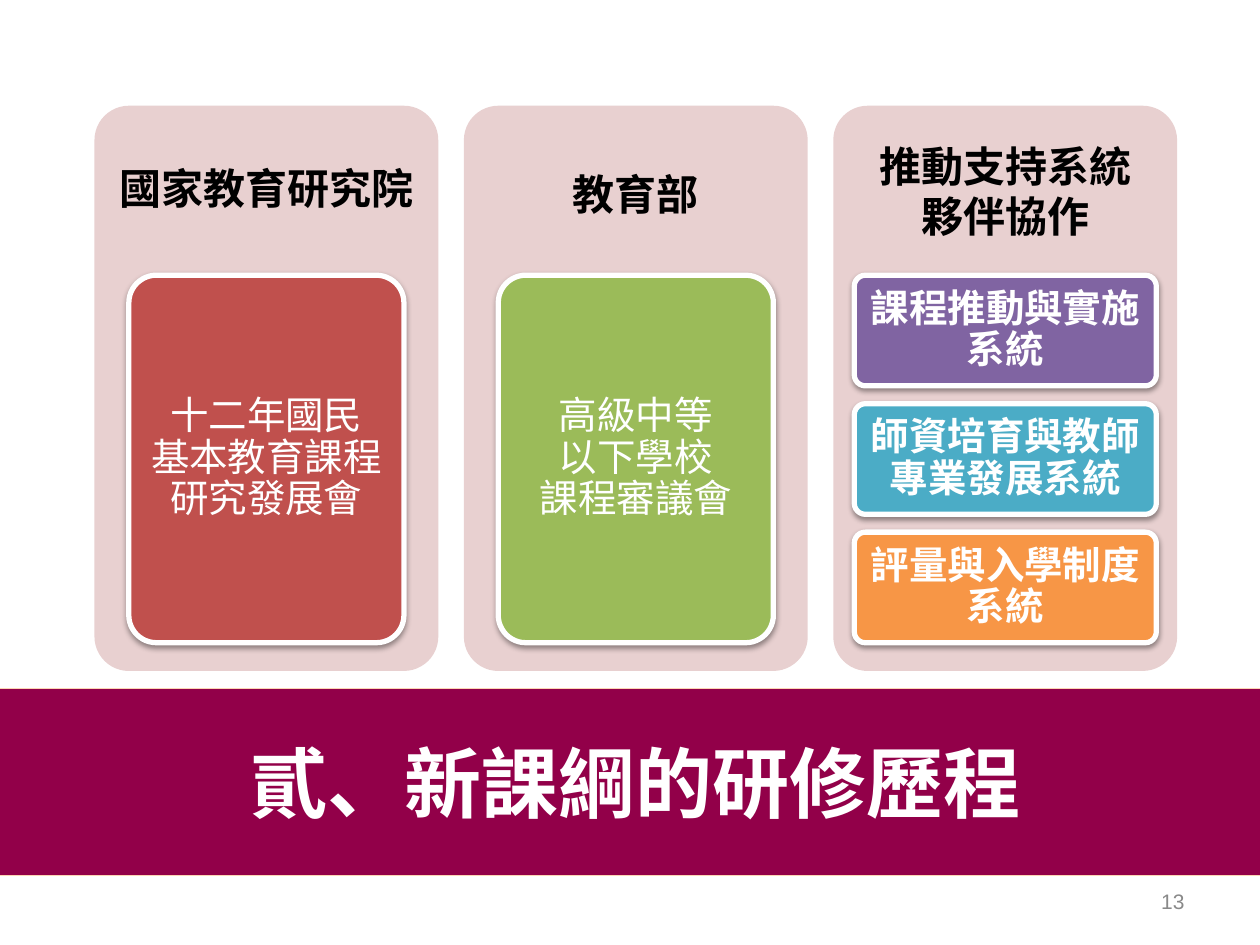
"""Builds the slide on how the new curriculum guidelines were developed."""
from dataclasses import dataclass

from lxml import etree
from pptx import Presentation
from pptx import util as u
from pptx.dml.color import RGBColor
from pptx.enum import shapes, text
from pptx.oxml import parse_xml
from pptx.oxml.ns import nsdecls, qn

SHADOW = (
    f'<a:effectLst {nsdecls("a")}><a:outerShdw blurRad="39370" dist="20320" dir="5400000" rotWithShape="0">'
    '<a:srgbClr val="000000"><a:alpha val="38000"/></a:srgbClr></a:outerShdw></a:effectLst>'
)


@dataclass(frozen=True)
class Theme:
    """Colours, fonts and type sizes."""
    banner: str = "920049"
    banner_edge: str = "FCD5B5"
    panel: str = "E8D0D0"
    red: str = "C0504D"
    green: str = "9BBB59"
    purple: str = "8064A2"
    teal: str = "4BACC6"
    orange: str = "F79646"
    white: str = "FFFFFF"
    black: str = "000000"
    grey: str = "898989"
    cjk: str = "Noto Sans CJK SC"
    latin: str = "Arial"
    title: int = 44
    heading: int = 24
    card: int = 22
    number: int = 12


class Deck:
    """Holds the theme and the current slide."""

    def __init__(self, theme):
        self.theme = theme
        self.presentation = Presentation()
        self.presentation.slide_width, self.presentation.slide_height = u.Pt(720), u.Pt(540)
        self.slide = self.presentation.slides.add_slide(self.presentation.slide_layouts[5])

    def set_text(self, shape, words, size, color, bold=False, font=None, align=text.PP_ALIGN.CENTER,
                 margins=(7.2, 3.6), spacing=None, after=0):
        frame = shape.text_frame
        frame.text = words
        frame.word_wrap = True
        frame.auto_size = text.MSO_AUTO_SIZE.NONE
        frame.vertical_anchor = text.MSO_ANCHOR.MIDDLE
        frame.margin_left = frame.margin_right = u.Pt(margins[0])
        frame.margin_top = frame.margin_bottom = u.Pt(margins[1])
        paragraph = frame.paragraphs[0]
        paragraph.alignment = align
        if spacing:
            paragraph.line_spacing = spacing
        if after:
            paragraph.space_after = u.Pt(after)
        for run in paragraph.runs:
            run.font.name = font or self.theme.cjk
            run.font.size = u.Pt(size)
            run.font.bold = bold
            run.font.color.rgb = RGBColor.from_string(color)
            east_asian = etree.Element(qn("a:ea"), typeface=run.font.name)
            run.font._element.find(qn("a:latin")).addnext(east_asian)

    def paint(self, shape, fill, edge=None, width=0):
        shape.fill.solid()
        shape.fill.fore_color.rgb = RGBColor.from_string(fill)
        if edge:
            shape.line.color.rgb = RGBColor.from_string(edge)
            shape.line.width = u.Pt(width)
        else:
            shape.line.fill.background()

    def rounded(self, box, fill, edge=None, width=0):
        shape = self.slide.shapes.add_shape(shapes.MSO_SHAPE.ROUNDED_RECTANGLE, *map(u.Pt, box))
        shape.adjustments[0] = 0.1
        shape.shadow.inherit = False
        self.paint(shape, fill, edge, width)
        return shape

    def label(self, box, words, size, color, **style):
        self.set_text(self.slide.shapes.add_textbox(*map(u.Pt, box)), words, size, color, **style)

    def banner(self, box, words):
        title = self.slide.shapes.title
        title.left, title.top, title.width, title.height = map(u.Pt, box)
        self.paint(title, self.theme.banner, self.theme.banner_edge, 0.75)
        self.set_text(title, words, self.theme.title, self.theme.white, bold=True)
        title.text_frame.margin_left = u.Pt(14.4)

    def panel(self, box, heading, spacing, after):
        self.rounded(box, self.theme.panel)
        left, top, width, height = box
        self.label((left, top, width, height * 0.3), heading, self.theme.heading, self.theme.black,
                   bold=True, margins=(7.2, 7.2), spacing=spacing, after=after)

    def card(self, box, words, fill, bold):
        card = self.rounded(box, fill, self.theme.white, 3)
        properties = card._element.spPr
        properties.replace(properties.find(qn("a:effectLst")), parse_xml(SHADOW))
        self.set_text(card, words, self.theme.card, self.theme.white, bold=bold,
                      margins=(4.4, 3.3), spacing=0.9, after=self.theme.card * 0.35)


def main():
    theme = Theme()
    deck = Deck(theme)
    deck.banner((-11.5, 393.3, 742.3, 107), "貳、新課綱的研修歷程")

    columns = [
        ("國家教育研究院", 0.9, theme.heading * 0.35, 157.2,
         [("十二年國民\v基本教育課程\v研究發展會", theme.red)]),
        ("教育部", u.Pt(32), 0, 157.2,
         [("高級中等\v以下學校\v課程審議會", theme.green)]),
        ("推動支持系統\v夥伴協作", u.Pt(28.8), 0, 172.6,
         [("課程推動與實施系統", theme.purple),
          ("師資培育與教師專業發展系統", theme.teal),
          ("評量與入學制度系統", theme.orange)]),
    ]
    panel_width, pitch, gap = 196.5, 211.1, 10.2
    cards_top, cards_height = 157.3, 210
    for column, (heading, spacing, after, card_width, cards) in enumerate(columns):
        left = 54 + column * pitch
        deck.panel((left, 60.4, panel_width, 323), heading, spacing, after)
        card_left = left + (panel_width - card_width) / 2
        card_height = (cards_height - gap * (len(cards) - 1)) / len(cards)
        for row, (words, fill) in enumerate(cards):
            card_top = cards_top + row * (card_height + gap)
            deck.card((card_left, card_top, card_width, card_height), words, fill, len(cards) > 1)

    deck.label((516, 500.5, 168, 28.8), "13", theme.number, theme.grey,
               font=theme.latin, align=text.PP_ALIGN.RIGHT)
    deck.presentation.save("out.pptx")


if __name__ == "__main__":
    main()
